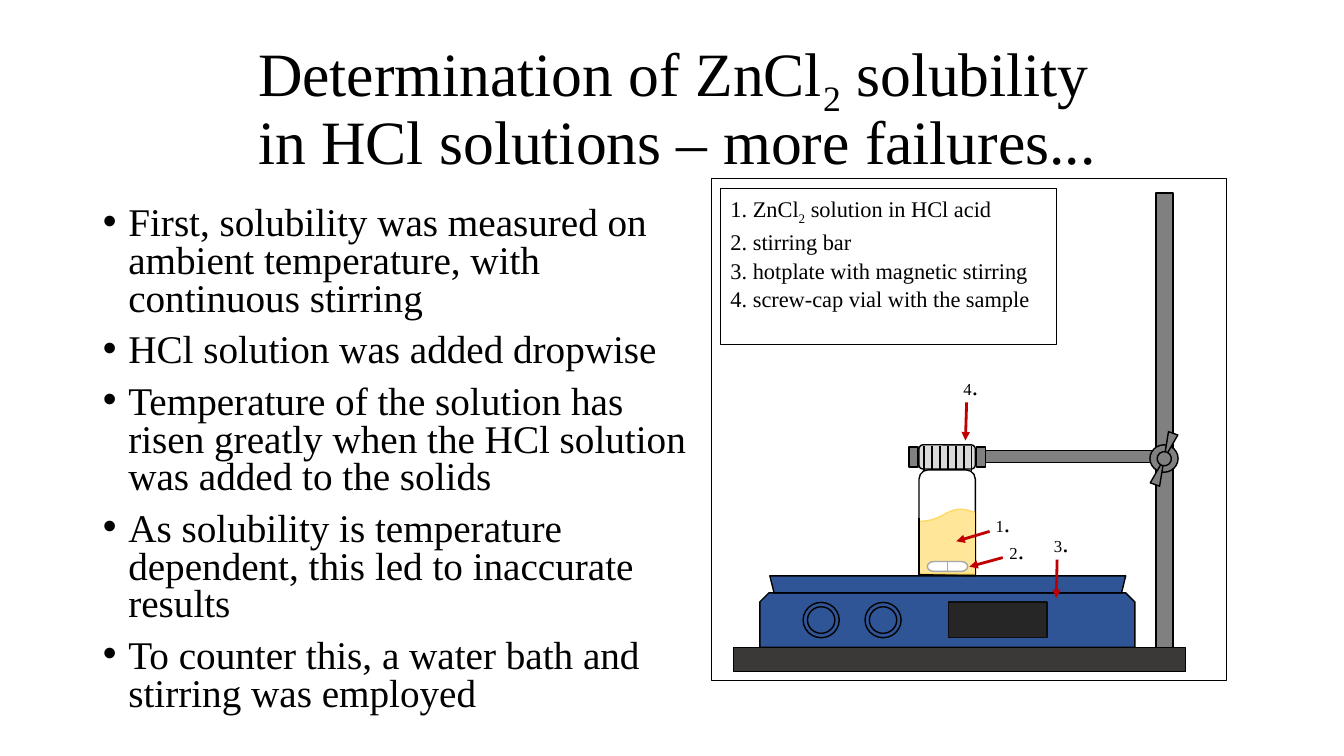
from dataclasses import dataclass

from lxml.etree import SubElement as Sub
from pptx import Presentation
from pptx.dml.color import RGBColor as Color
from pptx.enum.shapes import MSO_CONNECTOR as Link, MSO_SHAPE as Kind
from pptx.enum.text import MSO_ANCHOR as Anchor, MSO_AUTO_SIZE as Fit, PP_ALIGN as Align
from pptx.oxml.ns import qn
from pptx.util import Cm, Pt


@dataclass(frozen=True)
class Theme:
    font: str = "Times New Roman"
    head: int = 44
    body: int = 28
    key: int = 16
    dot: int = 18
    mark: int = 12
    black: str = "000000"
    white: str = "FFFFFF"
    steel: str = "808080"
    blue: str = "2F5597"
    cap: str = "D9D9D9"
    fluid: str = "FFE699"
    rim: str = "FFD966"
    pale: str = "A6A6A6"
    foot: str = "3B3838"
    screen: str = "262626"
    edge: str = "0D0D0D"
    red: str = "C00000"


T = Theme()


@dataclass
class Box:
    slide: object
    x: float
    y: float
    w: float
    h: float

    def inner(self, x, y, w, h):
        return Box(self.slide, self.x + x, self.y + y, w, h)

    def place(self, item):
        item.left, item.top = Cm(self.x), Cm(self.y)
        item.width, item.height = Cm(self.w), Cm(self.h)

    def draw(self, kind, fill, line=T.black, turn=0, width=1):
        item = self.slide.shapes.add_shape(kind, Cm(self.x), Cm(self.y), Cm(self.w), Cm(self.h))
        item.shadow.inherit = False
        item.fill.solid()
        item.fill.fore_color.rgb = Color.from_string(fill)
        item.line.color.rgb = Color.from_string(line)
        item.line.width = Pt(width)
        item.rotation = turn
        return item

    def rule(self, x1, y1, x2, y2, color=T.black, width=1, arrow=False):
        item = self.slide.shapes.add_connector(
            Link.STRAIGHT, Cm(self.x + x1), Cm(self.y + y1), Cm(self.x + x2), Cm(self.y + y2))
        item.line.color.rgb = Color.from_string(color)
        item.line.width = Pt(width)
        props = item.element.spPr
        if arrow:
            Sub(props.find(qn("a:ln")), qn("a:tailEnd"), type="triangle")
        Sub(props, qn("a:effectLst"))


def write(par, size, text, low=False):
    run = par.add_run()
    run.text = text
    run.font.name, run.font.size = T.font, Pt(size)
    run.font.color.rgb = Color.from_string(T.black)
    if low:
        run._r.get_or_add_rPr().set("baseline", "-25000")


def lines(frame, rows):
    for n, row in enumerate(rows):
        par = frame.add_paragraph() if n else frame.paragraphs[0]
        par.alignment = Align.LEFT
        yield n, par, row


def hang(par, depth):
    props = par._p.get_or_add_pPr()
    props.set("marL", str(Cm(depth)))
    props.set("indent", str(-Cm(depth)))
    return props


def title(box):
    item = box.slide.shapes.title
    box.place(item)
    frame = item.text_frame
    frame.word_wrap, frame.auto_size = True, Fit.NONE
    frame.vertical_anchor = Anchor.MIDDLE
    par = frame.paragraphs[0]
    par.alignment, par.line_spacing = Align.LEFT, 0.9
    write(par, T.head, "Determination of ZnCl")
    write(par, T.head, "2", low=True)
    write(par, T.head, " solubility in HCl solutions – more failures...")


def points(box, rows):
    item = box.slide.placeholders[1]
    box.place(item)
    frame = item.text_frame
    frame.word_wrap, frame.auto_size = True, Fit.NONE
    for n, par, row in lines(frame, rows):
        props = hang(par, 0.64)
        Sub(props, qn("a:buFont"), typeface="Arial")
        Sub(props, qn("a:buChar"), char="•")
        par.line_spacing, par.space_before = 0.8, Pt(10 if n else 0)
        write(par, T.body, row)


def stand(box):
    for x, y, w, h in ((11.2, 0.36, 0.43, 11.46), (5, 6.86, 6.63, 0.3),
                       (4.98, 6.76, 0.23, 0.51), (6.68, 6.76, 0.23, 0.51)):
        box.inner(x, y, w, h).draw(Kind.RECTANGLE, T.steel)
    box.inner(11.05, 6.71, 0.71, 0.69).draw(Kind.OVAL, T.steel)
    box.inner(0.56, 11.81, 11.38, 0.61).draw(Kind.RECTANGLE, T.foot)
    box.inner(11.28, 6.38, 0.25, 1.37).draw(Kind.FLOWCHART_COLLATE, T.steel, turn=19.6)
    box.inner(11.23, 6.88, 0.36, 0.36).draw(Kind.FLOWCHART_CONNECTOR, T.steel, turn=19.6)


def plate(box):
    box.draw(Kind.SNIP_2_SAME_RECTANGLE, T.blue)
    box.inner(0.25, -0.43, 8.97, 0.43).draw(Kind.TRAPEZOID, T.blue, turn=180)
    for x in (1.09, 2.65):
        box.inner(x, 0.24, 0.91, 0.89).draw(Kind.OVAL, T.blue)
        box.inner(x + 0.11, 0.35, 0.69, 0.67).draw(Kind.OVAL, T.blue)
    box.inner(4.75, 0.23, 2.49, 0.89).draw(Kind.RECTANGLE, T.screen, T.edge)


def vial(box):
    box.inner(0, 0, box.w, 0.61).draw(Kind.ROUNDED_RECTANGLE, T.cap)
    for n in range(7):
        x = 0.13 + 0.2 * n
        box.rule(x, 0.02, x, 0.66)
    box.inner(0, 0.63, box.w, 2.64).draw(Kind.ROUND_2_SAME_RECTANGLE, T.white)
    box.inner(0, 1.6, box.w, 1.65).draw(Kind.FLOWCHART_DOCUMENT, T.fluid, T.rim, 180)
    box.inner(0.21, 2.94, 1.02, 0.25).draw(Kind.FLOWCHART_TERMINATOR, T.white, T.pale)
    box.rule(0.71, 2.94, 0.71, 3.19, T.pale, 0.75)
    box.rule(0, 1.85, 0, box.h)
    box.rule(box.w, 1.67, box.w, box.h)
    box.rule(box.w, box.h + 0.03, 0, box.h)


def legend(box):
    frame = box.draw(Kind.RECTANGLE, T.white, width=0.75).text_frame
    frame.word_wrap, frame.vertical_anchor = True, Anchor.TOP
    rows = (("1. ZnCl", "2", " solution in HCl acid"), ("2. stirring bar",),
            ("3. hotplate with magnetic stirring",), ("4. screw-cap vial with the sample",))
    for _, par, row in lines(frame, rows):
        tabs = Sub(hang(par, 0.97), qn("a:tabLst"))
        Sub(tabs, qn("a:tab"), pos=str(Cm(1.27)), algn="l")
        par.line_spacing = 1.07
        for text in row:
            write(par, T.key, text, low=text == "2")


def marks(box):
    spots = (((6.91, 8.15), (7.01, 8.89, 6.17, 9.14)), ((7.26, 8.84), (7.34, 9.55, 6.5, 9.78)),
             ((8.38, 8.66), (8.71, 9.6, 8.69, 10.57)), ((6.1, 4.7), (6.43, 5.64, 6.4, 6.6)))
    for n, ((x, y), ends) in enumerate(spots, 1):
        box.rule(*ends, T.red, 2, True)
        item = box.slide.shapes.add_textbox(0, 0, 0, 0)
        box.inner(x, y, 1.14, 0.91).place(item)
        item.text_frame.word_wrap = True
        par = item.text_frame.paragraphs[0]
        write(par, T.mark, str(n))
        write(par, T.dot, ".")


def setup(box):
    box.draw(Kind.FLOWCHART_PROCESS, T.white)
    plate(box.inner(1.22, 10.44, 9.45, 1.37))
    stand(box)
    vial(box.inner(5.23, 6.71, 1.42, 3.27))
    legend(box.inner(0.23, 0.25, 8.46, 3.94))
    marks(box)


def main():
    deck = Presentation()
    deck.slide_width, deck.slide_height = Cm(33.87), Cm(19.05)
    slide = deck.slides.add_slide(deck.slide_layouts[1])
    title(Box(slide, 6.25, 0.86, 22.86, 3.68))
    points(Box(slide, 2.34, 5.08, 15.27, 12.09), (
        "First, solubility was measured on ambient temperature, with continuous stirring",
        "HCl solution was added dropwise",
        "Temperature of the solution has risen greatly when the HCl solution was added to the solids",
        "As solubility is temperature dependent, this led to inaccurate results",
        "To counter this, a water bath and stirring was employed"))
    setup(Box(slide, 17.93, 4.5, 12.98, 12.65))
    deck.save("out.pptx")


if __name__ == "__main__":
    main()
